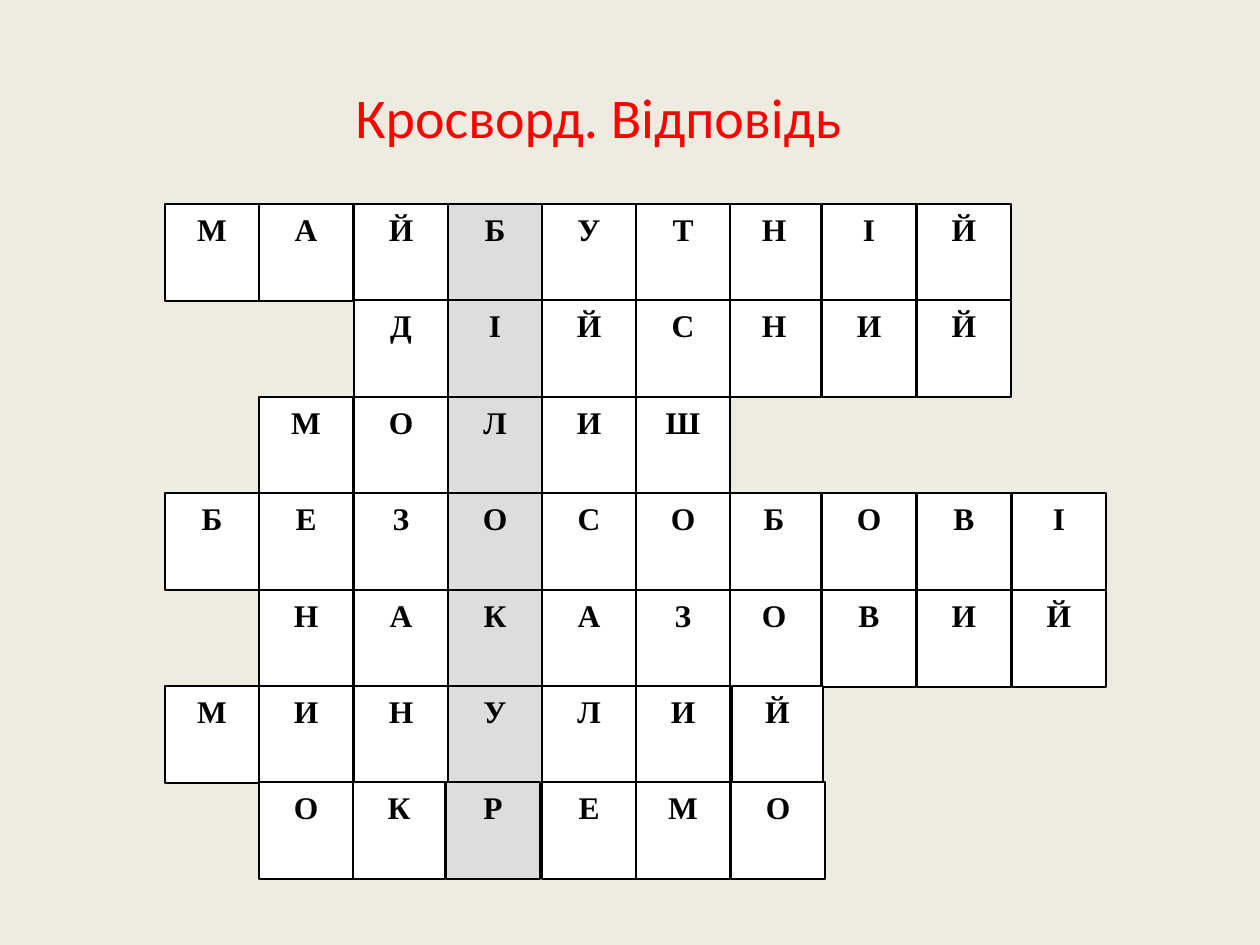
from dataclasses import dataclass

from pptx import Presentation
from pptx.dml.color import RGBColor
from pptx.enum.shapes import MSO_SHAPE as Shape
from pptx.enum.text import MSO_ANCHOR as Anchor, MSO_AUTO_SIZE as AutoSize, PP_ALIGN as Align
from pptx.util import Pt

EMU_PER_PX = 914400 // 126


@dataclass(frozen=True)
class Theme:
    background: str = "EEECE1"
    cell: str = "FFFFFF"
    keyword: str = "DDDDDD"
    ink: str = "000000"
    heading: str = "FF0000"
    heading_font: str = "Calibri"
    letter_font: str = "Times New Roman"
    heading_size: int = 32
    letter_size: int = 18
    border: float = 0.75


# Each answer with the column of its first letter
ANSWERS = [
    (0, "МАЙБУТНІЙ"),
    (2, "ДІЙСНИЙ"),
    (1, "МОЛИШ"),
    (0, "БЕЗОСОБОВІ"),
    (1, "НАКАЗОВИЙ"),
    (0, "МИНУЛИЙ"),
    (1, "ОКРЕМО"),
]
COLUMN_LEFTS = [165, 259, 354, 448, 542, 636, 727, 822, 917, 1012]
GRID_TOP, ROW_STEP = 204, 96.4
CELL_WIDTH, CELL_HEIGHT = 94, 97
KEYWORD_COLUMN = 3
# Row and column of the cells set apart from the grid: left, width
SHIFTED_CELLS = {(5, 6): (732, 91), (6, 6): (731, 94), (6, 3): (446, 94), (6, 2): (353, 92)}


def px(length):
    return length * EMU_PER_PX


def color(value):
    return RGBColor.from_string(value)


class SlideBuilder:
    def __init__(self, page, theme):
        self.page = page
        self.theme = theme
        fill = page.background.fill
        fill.solid()
        fill.fore_color.rgb = color(theme.background)

    def add_text(self, box, text, ink, align, **font_format):
        box.text_frame.vertical_anchor = Anchor.TOP
        para = box.text_frame.paragraphs[0]
        para.alignment = align
        span = para.add_run()
        span.text = text
        span.font.color.rgb = color(ink)
        for name, value in font_format.items():
            setattr(span.font, name, value)

    def title(self, text, left, top, width, height):
        box = self.page.shapes.add_textbox(px(left), px(top), px(width), px(height))
        box.text_frame.word_wrap = True
        box.text_frame.auto_size = AutoSize.SHAPE_TO_FIT_TEXT
        self.add_text(box, text, self.theme.heading, Align.LEFT,
                      name=self.theme.heading_font, size=Pt(self.theme.heading_size))

    def cell(self, letter, fill, left, top, width, height):
        box = self.page.shapes.add_shape(
            Shape.RECTANGLE, px(left), px(top), px(width), px(height))
        box.shadow.inherit = False
        box.fill.solid()
        box.fill.fore_color.rgb = color(fill)
        box.line.color.rgb = color(self.theme.ink)
        box.line.width = Pt(self.theme.border)
        self.add_text(box, letter, self.theme.ink, Align.CENTER, bold=True,
                      name=self.theme.letter_font, size=Pt(self.theme.letter_size))

    def answer(self, row, first_column, word):
        """Place a word from right to left, so each cell overlaps the one after it."""
        top = GRID_TOP + round(row * ROW_STEP)
        for column, letter in reversed(list(enumerate(word, first_column))):
            left, width = SHIFTED_CELLS.get((row, column), (COLUMN_LEFTS[column], CELL_WIDTH))
            fill = self.theme.keyword if column == KEYWORD_COLUMN else self.theme.cell
            self.cell(letter, fill, left, top, width, CELL_HEIGHT)


def main():
    deck = Presentation()
    deck.slide_width, deck.slide_height = px(1260), px(945)
    builder = SlideBuilder(deck.slides.add_slide(deck.slide_layouts[6]), Theme())
    for row, (first_column, word) in enumerate(ANSWERS):
        builder.answer(row, first_column, word)
    builder.title("Кросворд. Відповідь", 343, 76, 586, 81)
    deck.save("out.pptx")


if __name__ == "__main__":
    main()
